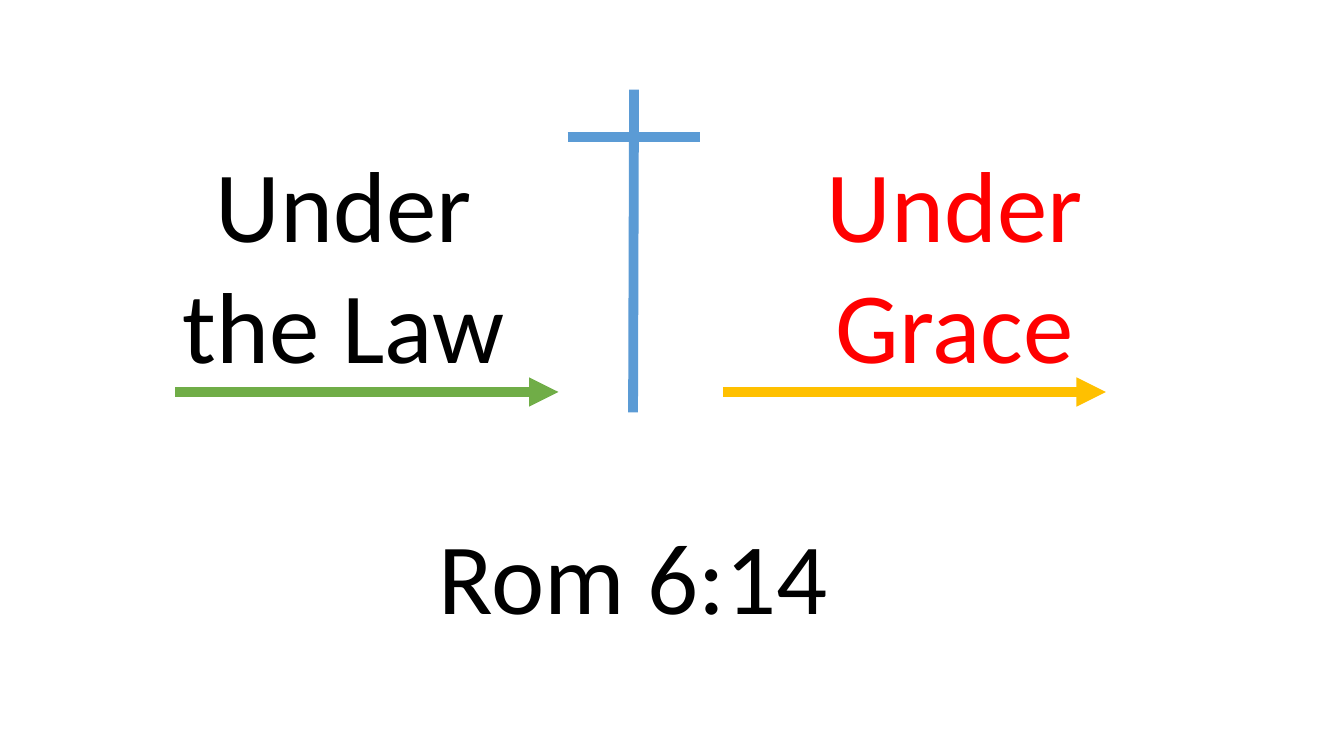
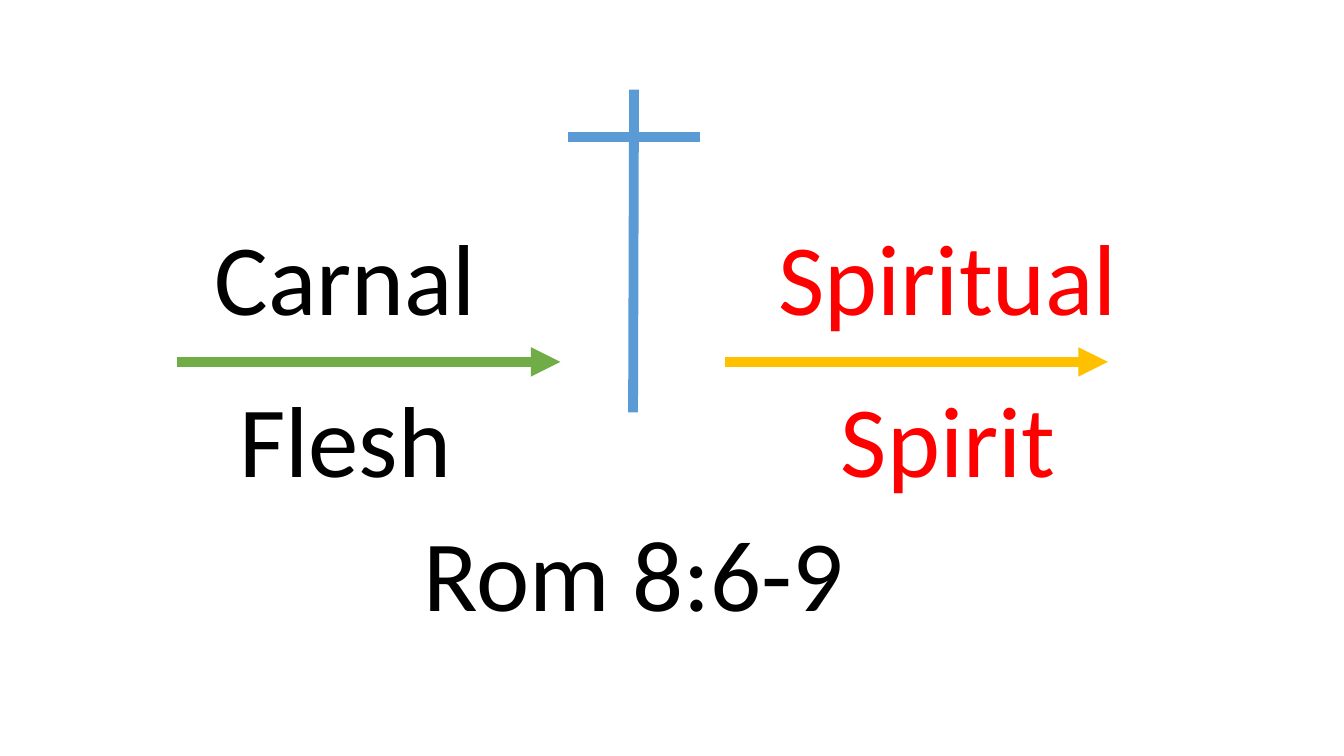
"""Build two slides that contrast life before and after the cross."""
import pptx
import pptx.dml.color
import pptx.enum.shapes
import pptx.enum.text
import pptx.oxml
import pptx.oxml.ns
import pptx.util

COLORS = {
    "cross": "5B9BD5",
    "before_arrow": "70AD47",
    "after_arrow": "FFC000",
    "before": "000000",
    "after": "FF0000",
    "reference": "000000",
}
FONT = {"name": "Calibri", "size": pptx.util.Pt(72)}
FRAME = {
    "word_wrap": True,
    "auto_size": pptx.enum.text.MSO_AUTO_SIZE.SHAPE_TO_FIT_TEXT,
}
LINE_WIDTH = 7
ARROW_LENGTH = 273.6
ARROW_STEP = 391
LINE_HEIGHT = 94.5

SLIDES = [
    {
        "arrows": (125.3, 280),
        "words": [
            ("Under Grace", "after", 681.8, 98, 289.5, 2),
            ("Under the Law", "before", 245.5, 98, 260.6, 2),
            ("Rom 6:14", "reference", 452.2, 363.6, 295.2, 1),
        ],
    },
    {
        "arrows": (126.7, 258.5),
        "words": [
            ("Spiritual", "after", 677.2, 149.8, 264.2, 1),
            ("Carnal", "before", 246.6, 149.8, 242.6, 1),
            ("Flesh", "before", 246.6, 265.7, 167.8, 1),
            ("Spirit", "after", 677.2, 265.7, 169.2, 1),
            ("Rom 8:6-9", "reference", 452.5, 361.4, 317.5, 1),
        ],
    },
]


def set_all(target, values):
    for name, value in values.items():
        setattr(target, name, value)


def rgb(name):
    return pptx.dml.color.RGBColor.from_string(COLORS[name])


def add_line(page, start, end, color, arrow=False):
    points = [pptx.util.Pt(value) for value in (*start, *end)]
    line = page.shapes.add_connector(
        pptx.enum.shapes.MSO_CONNECTOR.STRAIGHT, *points
    )
    line.line.width = pptx.util.Pt(LINE_WIDTH)
    line.line.color.rgb = rgb(color)
    properties = line.element.spPr
    if arrow:
        tail = pptx.oxml.parse_xml(
            f'<a:tailEnd {pptx.oxml.ns.nsdecls("a")} type="triangle"/>'
        )
        properties.find(pptx.oxml.ns.qn("a:ln")).append(tail)
    properties.append(
        pptx.oxml.parse_xml(f'<a:effectLst {pptx.oxml.ns.nsdecls("a")}/>')
    )


def add_cross(page):
    add_line(page, (405.4, 97.9), (499.7, 97.9), "cross")
    add_line(page, (452.9, 64.1), (452.2, 294.5), "cross")


def add_arrows(page, left, top):
    for index, color in enumerate(("before_arrow", "after_arrow")):
        start = left + index * ARROW_STEP
        add_line(page, (start, top), (start + ARROW_LENGTH, top), color, True)


def add_words(page, text, color, center, top, width, lines):
    bounds = (center - width / 2, top, width, lines * LINE_HEIGHT)
    box = page.shapes.add_textbox(*(pptx.util.Pt(value) for value in bounds))
    set_all(box.text_frame, FRAME)
    para = box.text_frame.paragraphs[0]
    para.alignment = pptx.enum.text.PP_ALIGN.CENTER
    span = para.add_run()
    span.text = text
    set_all(span.font, FONT)
    span.font.color.rgb = rgb(color)


def main():
    deck = pptx.Presentation()
    set_all(
        deck,
        {"slide_width": pptx.util.Pt(960), "slide_height": pptx.util.Pt(540)},
    )
    for content in SLIDES:
        page = deck.slides.add_slide(deck.slide_layouts[6])
        add_cross(page)
        for words in content["words"]:
            add_words(page, *words)
        add_arrows(page, *content["arrows"])
    deck.save("out.pptx")


if __name__ == "__main__":
    main()
